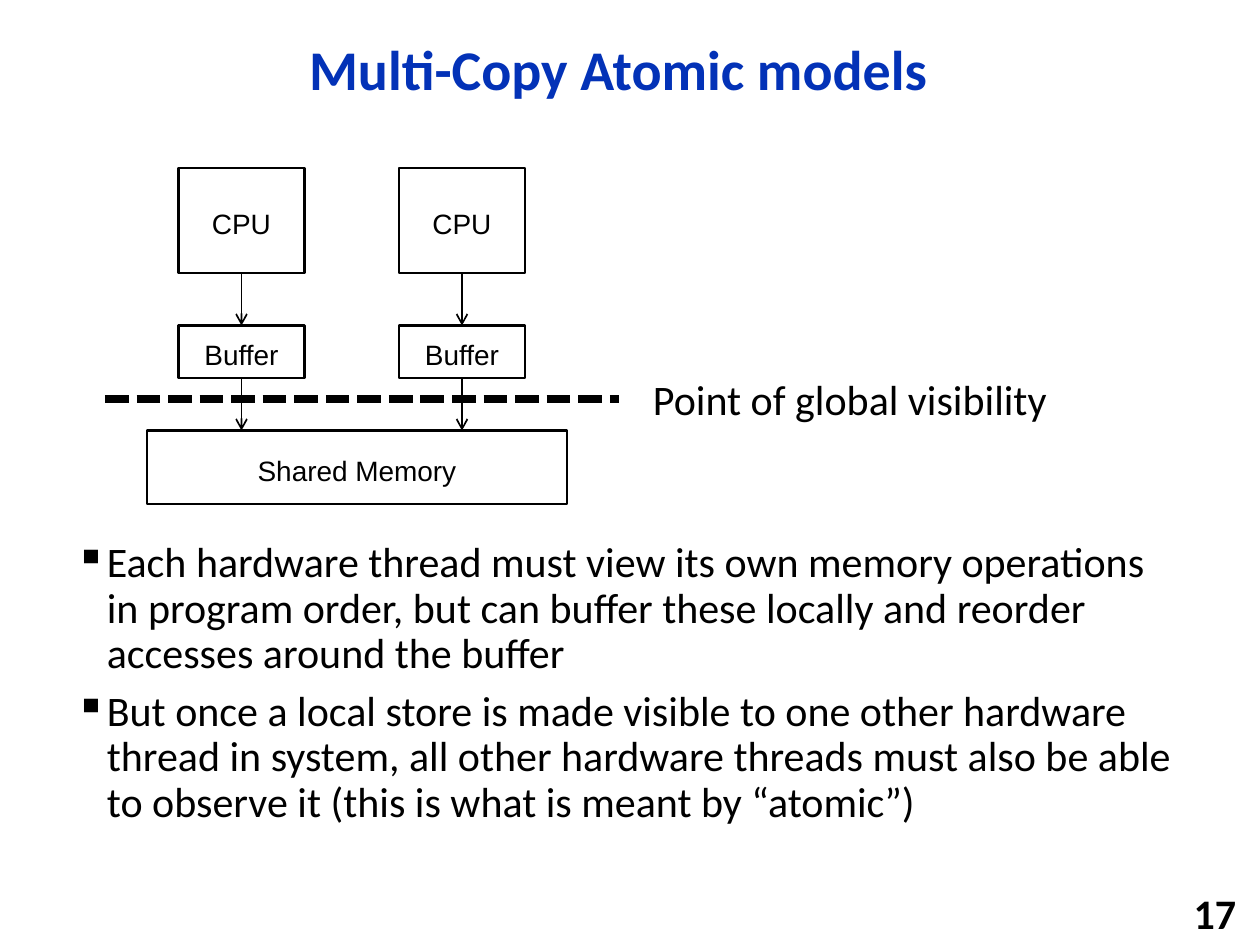
from dataclasses import dataclass

from lxml.etree import SubElement
from pptx import Presentation
from pptx.dml.color import RGBColor
from pptx.enum.dml import MSO_LINE
from pptx.enum.shapes import MSO_CONNECTOR, MSO_SHAPE
from pptx.enum.text import MSO_ANCHOR as Anchor, PP_ALIGN as Align
from pptx.oxml.ns import qn
from pptx.util import Inches, Pt


@dataclass(frozen=True)
class Theme:
    ink: RGBColor = RGBColor(0x00, 0x00, 0x00)
    paper: RGBColor = RGBColor(0xFF, 0xFF, 0xFF)
    title: RGBColor = RGBColor(0x03, 0x32, 0xB7)
    text_font: str = "Calibri"
    diagram_font: str = "Arial"
    title_size: int = 32
    text_size: int = 24
    diagram_size: int = 16
    box_line: float = 1.5
    arrow_line: float = 1
    divider_line: float = 4.5


THEME = Theme()
COLUMNS, ROWS = 120, 90
UNIT = Inches(10) // COLUMNS

CPU_COLUMNS = (17, 38)
BOX_WIDTH = 12
CPU_TOP, CPU_HEIGHT = 16, 10
BUFFER_TOP, BUFFER_HEIGHT = 31, 5
MEMORY_TOP, MEMORY_HEIGHT = 41, 7
VISIBILITY_ROW = 38

POINTS = (
    "Each hardware thread must view its own memory operations in program order, "
    "but can buffer these locally and reorder accesses around the buffer",
    "But once a local store is made visible to one other hardware thread in system, "
    "all other hardware threads must also be able to observe it "
    "(this is what is meant by “atomic”)",
)


def grid(*cells):
    """Turn columns and rows into lengths."""
    return [round(cell * UNIT) for cell in cells]


def write_text(shape, *texts, font=THEME.text_font, size=THEME.text_size, color=THEME.ink,
               bold=False, align=Align.LEFT, anchor=Anchor.TOP, wrap=True,
               line_spacing=None, before=0, bullet=None, bottom=0.05):
    """Write one paragraph per text; before is a share of the line height."""
    frame = shape.text_frame
    frame.word_wrap = wrap
    frame.vertical_anchor = anchor
    frame.margin_bottom = Inches(bottom)
    for index, text in enumerate(texts):
        paragraph = frame.add_paragraph() if index else frame.paragraphs[0]
        paragraph.alignment = align
        paragraph.line_spacing = line_spacing
        properties = paragraph._p.get_or_add_pPr()
        if before:
            spacing = SubElement(properties, qn("a:spcBef"))
            SubElement(spacing, qn("a:spcPct"), val=str(round(before * 100000)))
        if bullet:
            properties.set("marL", str(Inches(0.25)))
            properties.set("indent", str(-Inches(0.25)))
            SubElement(properties, qn("a:buChar"), char=bullet)
        run = paragraph.add_run()
        run.text = text
        run.font.name = font
        run.font.size = Pt(size)
        run.font.bold = bold
        run.font.color.rgb = color


def add_text(slide, cells, *texts, **text_format):
    write_text(slide.shapes.add_textbox(*grid(*cells)), *texts, **text_format)


def add_box(slide, cells, label):
    box = slide.shapes.add_shape(MSO_SHAPE.RECTANGLE, *grid(*cells))
    box.shadow.inherit = False
    box.fill.solid()
    box.fill.fore_color.rgb = THEME.paper
    box.line.color.rgb = THEME.ink
    box.line.width = Pt(THEME.box_line)
    write_text(box, label, font=THEME.diagram_font, size=THEME.diagram_size,
               align=Align.CENTER, anchor=Anchor.MIDDLE, before=0.5, bottom=0)


def add_line(slide, start, end, width):
    line = slide.shapes.add_connector(MSO_CONNECTOR.STRAIGHT, *grid(*start, *end))
    line.line.color.rgb = THEME.ink
    line.line.width = Pt(width)
    SubElement(line._element.spPr, qn("a:effectLst"))
    return line


def add_down_arrow(slide, column, top, bottom):
    arrow = add_line(slide, (column, top), (column, bottom), THEME.arrow_line)
    SubElement(arrow.line._get_or_add_ln(), qn("a:tailEnd"), type="arrow")


def add_diagram(slide):
    add_box(slide, (14, MEMORY_TOP, 40, MEMORY_HEIGHT), "Shared Memory")
    for column in CPU_COLUMNS:
        center = column + BOX_WIDTH / 2
        add_box(slide, (column, CPU_TOP, BOX_WIDTH, CPU_HEIGHT), "CPU")
        add_box(slide, (column, BUFFER_TOP, BOX_WIDTH, BUFFER_HEIGHT), "Buffer")
        add_down_arrow(slide, center, CPU_TOP + CPU_HEIGHT, BUFFER_TOP)
        add_down_arrow(slide, center, BUFFER_TOP + BUFFER_HEIGHT, MEMORY_TOP)
    divider = add_line(slide, (10, VISIBILITY_ROW), (59, VISIBILITY_ROW), THEME.divider_line)
    divider.line.dash_style = MSO_LINE.SQUARE_DOT
    add_text(slide, (61, 35, 40.4, 6), "Point of global visibility", wrap=False, before=0.5)


def main():
    presentation = Presentation()
    presentation.slide_width, presentation.slide_height = grid(COLUMNS, ROWS)
    slide = presentation.slides.add_slide(presentation.slide_layouts[6])
    add_text(slide, (11, 2, 95.8, 9.7), "Multi-Copy Atomic models", size=THEME.title_size,
             color=THEME.title, bold=True, align=Align.CENTER, anchor=Anchor.MIDDLE,
             line_spacing=0.9)
    add_text(slide, (6, 51, 108, 29.3), *POINTS, line_spacing=0.9, before=0.3, bullet="▪")
    add_text(slide, (94, 85, 24.9, 3.8), "17", bold=True, align=Align.RIGHT,
             anchor=Anchor.MIDDLE, wrap=False)
    add_diagram(slide)
    presentation.save("out.pptx")


if __name__ == "__main__":
    main()
